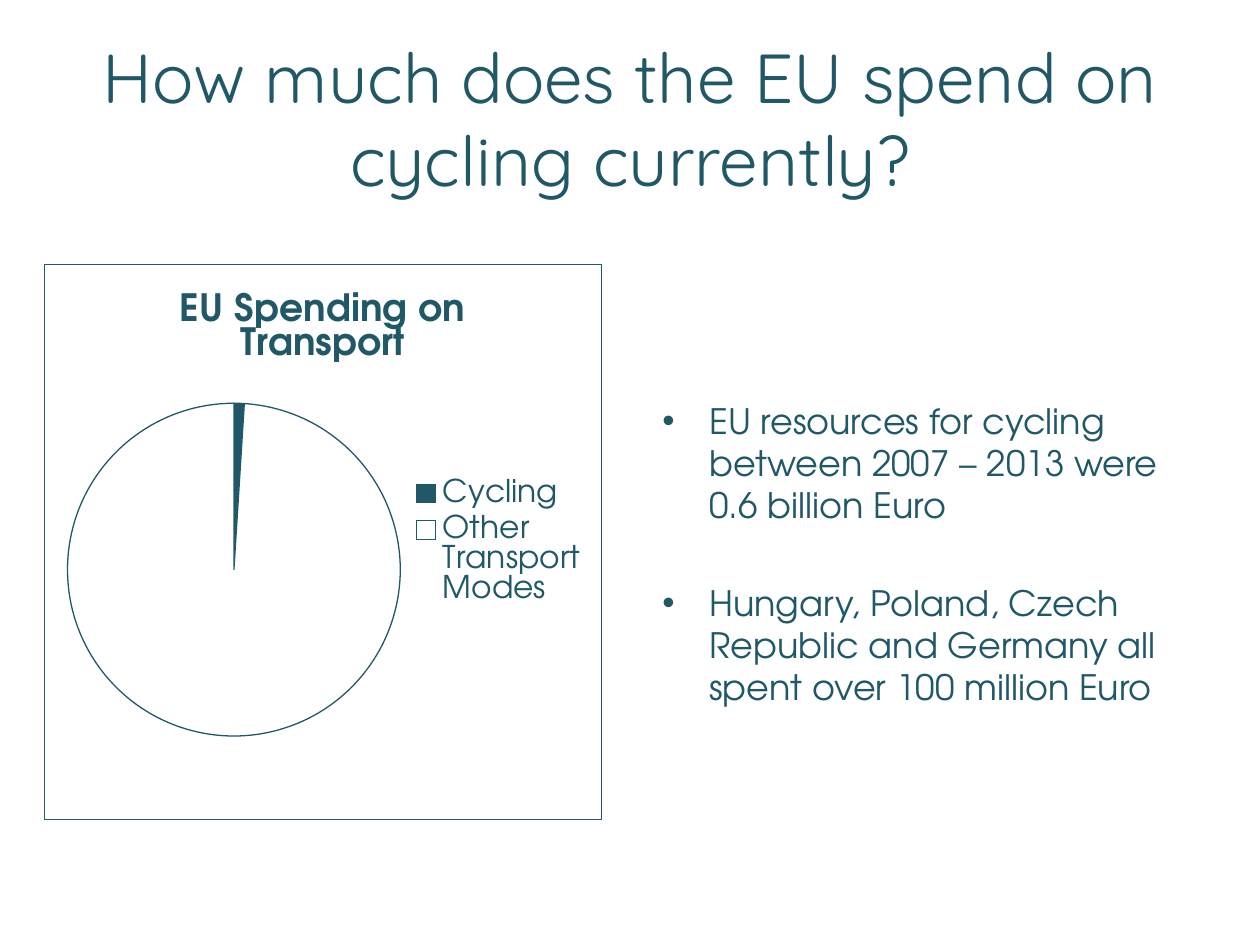
from dataclasses import dataclass

from lxml.etree import SubElement
from pptx import Presentation
from pptx.chart.data import CategoryChartData
from pptx.dml.color import RGBColor
from pptx.enum.chart import XL_CHART_TYPE, XL_LEGEND_POSITION
from pptx.enum.text import MSO_ANCHOR, PP_ALIGN
from pptx.oxml import parse_xml
from pptx.oxml.ns import nsdecls, qn
from pptx.util import Pt

SCALE = 914400 / 126


@dataclass(frozen=True)
class Theme:
    teal: RGBColor = RGBColor(0x20, 0x58, 0x67)
    white: RGBColor = RGBColor(0xFF, 0xFF, 0xFF)
    title_font: str = "Quicksand"
    body_font: str = "TeX Gyre Adventor"
    title_size: float = 39.6
    body_size: float = 20
    chart_title_size: float = 21.6
    chart_size: float = 18


theme = Theme()


def px(*lengths):
    return [round(length * SCALE) for length in lengths]


def write_text(paragraph, text, font=theme.body_font, size=theme.body_size,
               bold=False, align=PP_ALIGN.LEFT, before=0, bullet=None):
    if bullet:
        properties = paragraph._p.get_or_add_pPr()
        indent = px(47)[0]
        properties.set("marL", str(indent))
        properties.set("indent", str(-indent))
        SubElement(properties, qn("a:buFont")).set("typeface", "Arial")
        SubElement(properties, qn("a:buChar")).set("char", bullet)
    paragraph.alignment = align
    paragraph.space_before = Pt(before)
    run = paragraph.add_run()
    run.text = text
    run.font.name = font
    run.font.size = Pt(size)
    run.font.bold = bold
    run.font.color.rgb = theme.teal


presentation = Presentation()
presentation.slide_width, presentation.slide_height = px(1260, 945)
slide = presentation.slides.add_slide(presentation.slide_layouts[5])

title = slide.shapes.title
title.left, title.top, title.width, title.height = px(63, 38, 1134, 158)
title.text_frame.vertical_anchor = MSO_ANCHOR.MIDDLE
write_text(title.text_frame.paragraphs[0],
           "How much does the EU spend on cycling currently?",
           font=theme.title_font, size=theme.title_size, align=PP_ALIGN.CENTER)

spending = CategoryChartData()
spending.categories = ["Cycling", "Other Transport Modes"]
spending.add_series("EU Spending on Transport", (1, 99))
chart = slide.shapes.add_chart(
    XL_CHART_TYPE.PIE, *px(44, 264, 558, 556), spending).chart
chart.font.name = theme.body_font
chart.font.size = Pt(theme.chart_size)
chart.font.color.rgb = theme.teal

chart.has_title = True
write_text(chart.chart_title.text_frame.paragraphs[0], "EU Spending on Transport",
           size=theme.chart_title_size, bold=True, align=PP_ALIGN.CENTER)
chart.has_legend = True
chart.legend.position = XL_LEGEND_POSITION.RIGHT
chart.legend.include_in_layout = False

plot = chart.plots[0]
plot.vary_by_categories = True
for index, color in enumerate((theme.teal, theme.white)):
    slice_format = plot.series[0].points[index].format
    slice_format.fill.solid()
    slice_format.fill.fore_color.rgb = color
    slice_format.line.color.rgb = theme.teal
    slice_format.line.width = Pt(0.75)

plot_area = chart._chartSpace.chart.plotArea
for layout in plot_area.findall(qn("c:layout")):
    plot_area.remove(layout)
plot_area.insert(0, parse_xml(
    f'<c:layout {nsdecls("c")}><c:manualLayout><c:layoutTarget val="inner"/>'
    '<c:xMode val="edge"/><c:yMode val="edge"/><c:x val="0.04"/><c:y val="0.25"/>'
    '<c:w val="0.6"/><c:h val="0.6"/></c:manualLayout></c:layout>'))
chart._chartSpace.chart.addnext(parse_xml(
    f'<c:spPr {nsdecls("c", "a")}><a:solidFill><a:srgbClr val="{theme.white}"/></a:solidFill>'
    f'<a:ln w="{Pt(0.75)}"><a:solidFill><a:srgbClr val="{theme.teal}"/></a:solidFill></a:ln>'
    '</c:spPr>'))

facts = slide.shapes.add_textbox(*px(650, 244, 557, 624)).text_frame
facts.word_wrap = True
facts.margin_top = px(155)[0]
bullets = (
    "EU resources for cycling between 2007 – 2013 were 0.6 billion Euro",
    "Hungary, Poland, Czech Republic and Germany all spent over 100 million Euro",
)
for index, text in enumerate(bullets):
    paragraph = facts.add_paragraph() if index else facts.paragraphs[0]
    write_text(paragraph, text, before=32 * index, bullet="•")

presentation.save("out.pptx")
